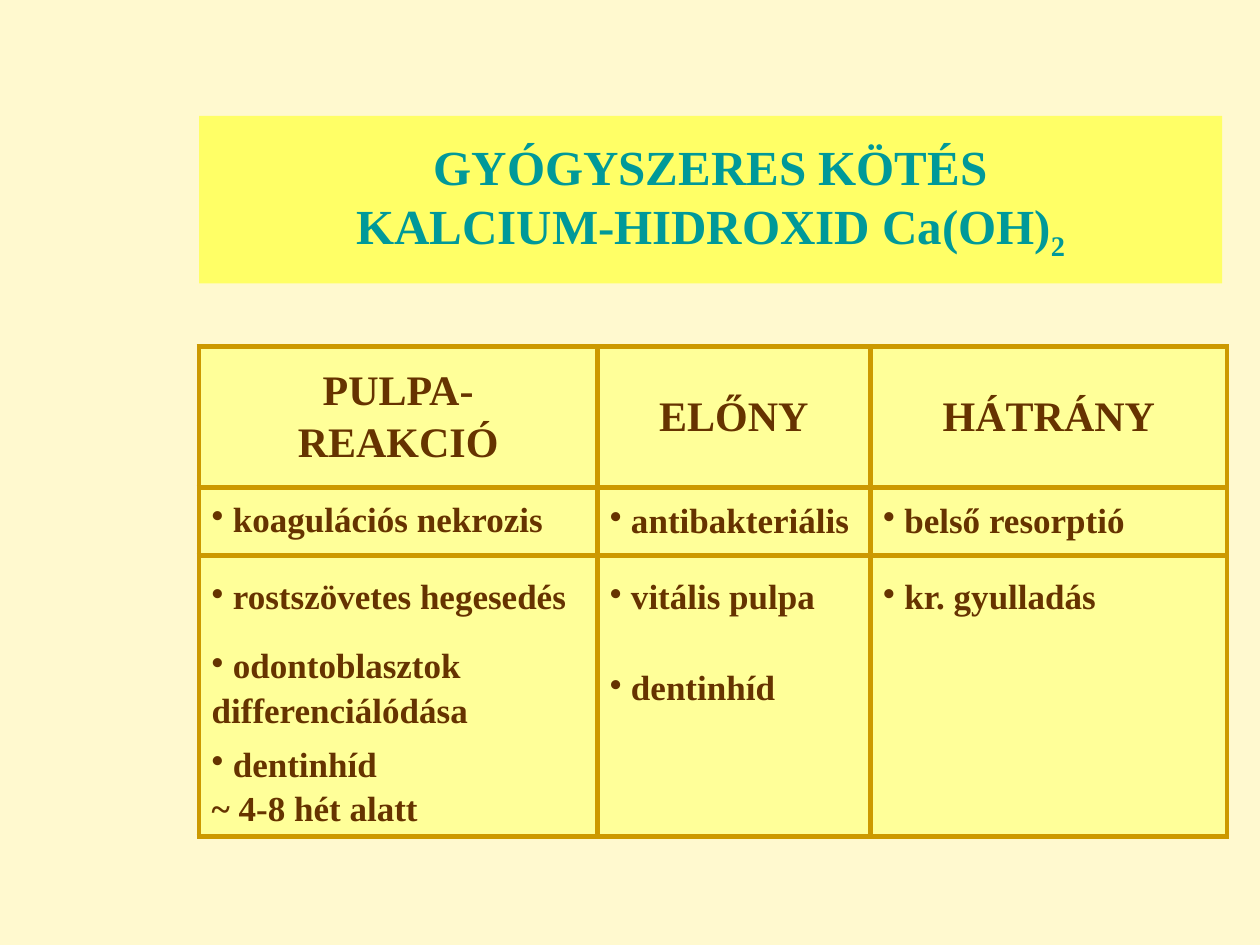
from lxml import etree
from pptx import Presentation
from pptx import util as u
from pptx.dml.color import RGBColor
from pptx.enum import text
from pptx.oxml.ns import qn

COLORS = {
    "background": "FFF9CF",
    "title_fill": "FFFF66",
    "title_text": "009999",
    "cell_fill": "FFFF99",
    "cell_text": "663300",
    "border": "CC9900",
}
FONT = "Times New Roman"
NO_GRID_STYLE = "{2D5ABB26-0587-4C30-8999-92F81FD0307C}"
COLUMN_WIDTHS = [3.16, 2.17, 2.83]
ROW_HEIGHTS = [1.12, 0.54, 0.67, 0.78, 0.78]
ROWS = [
    ["PULPA-\nREAKCIÓ", "ELŐNY", "HÁTRÁNY"],
    ["• koagulációs nekrozis", "• antibakteriális", "• belső resorptió"],
    ["• rostszövetes hegesedés", "• vitális pulpa", "• kr. gyulladás"],
    ["• odontoblasztok\ndifferenciálódása", "• dentinhíd", ""],
    ["• dentinhíd\n~ 4-8 hét alatt", "", ""],
]


def color(name):
    return RGBColor.from_string(COLORS[name])


def paint(fill, name):
    fill.solid()
    fill.fore_color.rgb = color(name)


def style_font(font, size, name):
    font.name = FONT
    font.size = u.Pt(size)
    font.bold = True
    font.color.rgb = color(name)


def add_title(slide, left, top, width, height):
    title = slide.shapes.title
    title.left, title.top, title.width, title.height = left, top, width, height
    paint(title.fill, "title_fill")
    frame = title.text_frame
    frame.word_wrap = True
    frame.vertical_anchor = text.MSO_ANCHOR.MIDDLE
    frame.text = "GYÓGYSZERES KÖTÉS\vKALCIUM-HIDROXID Ca(OH)"
    heading = frame.paragraphs[0]
    heading.alignment = text.PP_ALIGN.CENTER
    subscript = heading.add_run()
    subscript.text = "2"
    style_font(heading.font, 28, "title_text")
    for run in heading.runs:
        style_font(run.font, 28, "title_text")
    subscript._r.get_or_add_rPr().set("baseline", "-25000")


def set_borders(cell, sides):
    properties = cell._tc.get_or_add_tcPr()
    for position, side in enumerate(sides):
        line = etree.Element(qn(f"a:ln{side}"), w=str(u.Pt(3)))
        fill = etree.SubElement(line, qn("a:solidFill"))
        etree.SubElement(fill, qn("a:srgbClr"), val=COLORS["border"])
        properties.insert(position, line)


def fill_cell(cell, content, is_header):
    paint(cell.fill, "cell_fill")
    cell.vertical_anchor = text.MSO_ANCHOR.MIDDLE
    frame = cell.text_frame
    frame.text = content.replace("•", "")
    for index, (paragraph, line) in enumerate(zip(frame.paragraphs, content.split("\n"))):
        if is_header:
            paragraph.alignment = text.PP_ALIGN.CENTER
        if index:
            paragraph.space_before = u.Pt(3)
        if line.startswith("•"):
            etree.SubElement(paragraph._p.get_or_add_pPr(), qn("a:buChar"), char="•")
        for run in paragraph.runs:
            style_font(run.font, 24 if is_header else 20, "cell_text")


def add_comparison(slide, left, top, width, height):
    table = slide.shapes.add_table(
        len(ROWS), len(COLUMN_WIDTHS), left, top, width, height
    ).table
    table._tbl.tblPr[0].text = NO_GRID_STYLE
    table.horz_banding = False
    for column, column_width in zip(table.columns, COLUMN_WIDTHS):
        column.width = u.Inches(column_width)
    for row, row_height in zip(table.rows, ROW_HEIGHTS):
        row.height = u.Inches(row_height)
    for r, contents in enumerate(ROWS):
        sides = "LR" + ("T" if r < 2 else "") + ("B" if r in (0, len(ROWS) - 1) else "")
        for c, content in enumerate(contents):
            cell = table.cell(r, c)
            fill_cell(cell, content, r == 0)
            set_borders(cell, sides)
    table.cell(1, 0).text_frame.paragraphs[0].line_spacing = 0.9


def main():
    presentation = Presentation()
    presentation.slide_width = u.Inches(10)
    presentation.slide_height = u.Inches(7.5)
    slide = presentation.slides.add_slide(presentation.slide_layouts[5])
    paint(slide.background.fill, "background")
    add_title(slide, u.Inches(1.58), u.Inches(0.92), u.Inches(8.12), u.Inches(1.33))
    add_comparison(
        slide, u.Inches(1.58), u.Inches(2.75),
        u.Inches(sum(COLUMN_WIDTHS)), u.Inches(sum(ROW_HEIGHTS)),
    )
    presentation.save("out.pptx")


if __name__ == "__main__":
    main()
